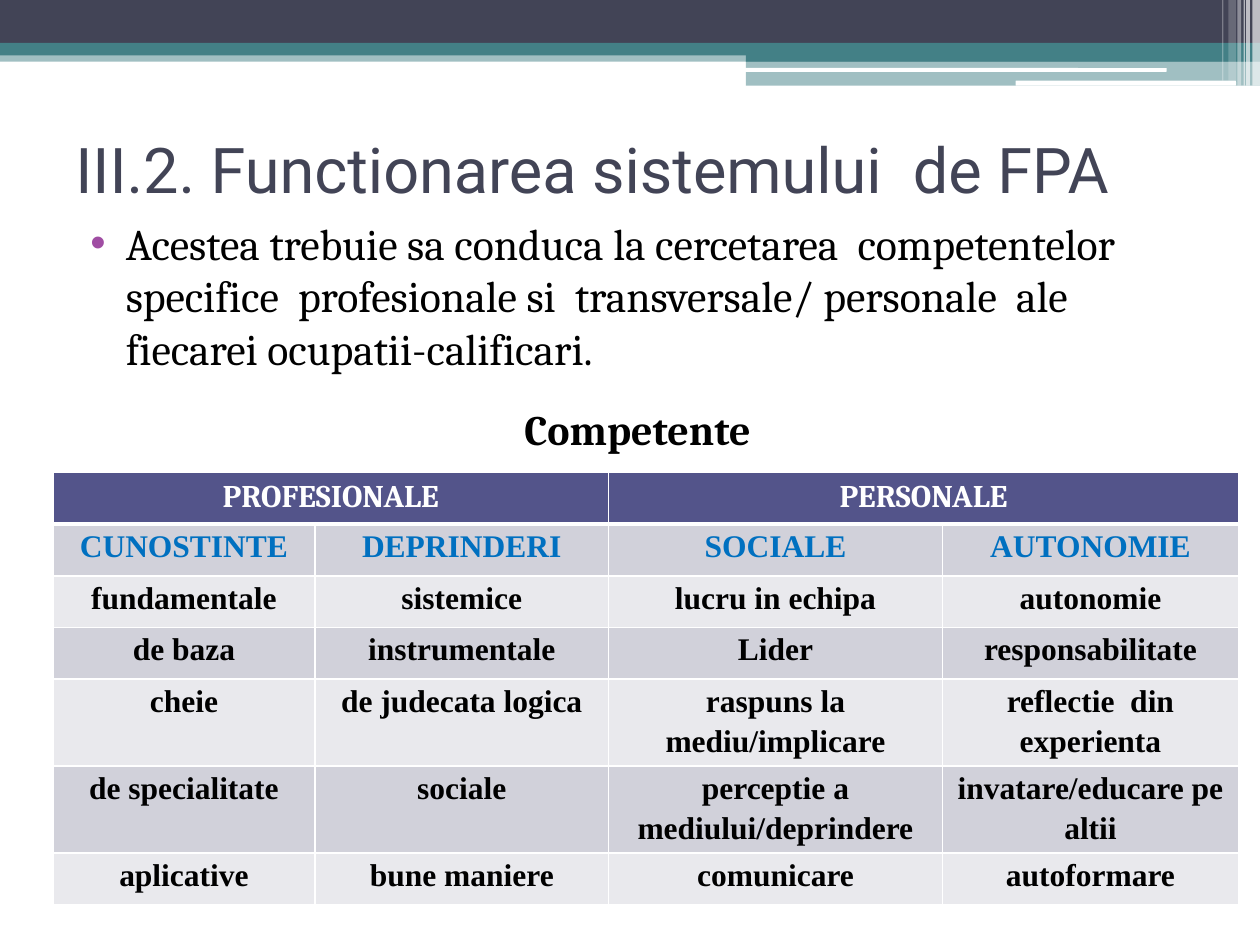
from pptx import Presentation
from pptx.dml.color import RGBColor
from pptx.enum.shapes import MSO_SHAPE as Shape
from pptx.enum.text import MSO_ANCHOR as Anchor, PP_ALIGN as Align
from pptx.oxml.ns import qn
from pptx.util import Inches, Pt
from lxml.etree import SubElement as Sub

WHITE = RGBColor(0xFF, 0xFF, 0xFF)
BLACK = RGBColor(0, 0, 0)
DARK = RGBColor(0x42, 0x44, 0x56)
TEAL = RGBColor(0x43, 0x80, 0x86)
PURPLE = RGBColor(0xA0, 0x4D, 0xA3)
INDIGO = RGBColor(0x53, 0x54, 0x8A)
BLUE = RGBColor(0x00, 0x70, 0xC0)
BANDS = RGBColor(0xD1, 0xD1, 0xDA), RGBColor(0xE9, 0xE9, 0xED)

TITLE = "III.2. Functionarea sistemului  de FPA"
POINT = ("Acestea trebuie sa conduca la cercetarea  competentelor specifice  "
         "profesionale si  transversale/ personale  ale  fiecarei "
         "ocupatii-calificari.")
CAPTION = "Competente"
GROUPS = ["PROFESIONALE", "PERSONALE"]
ROWS = [
    ["CUNOSTINTE", "DEPRINDERI", "SOCIALE", "AUTONOMIE"],
    ["fundamentale", "sistemice", "lucru in echipa", "autonomie"],
    ["de baza", "instrumentale", "Lider", "responsabilitate"],
    ["cheie", "de judecata logica", "raspuns la mediu/implicare",
     "reflectie  din experienta"],
    ["de specialitate", "sociale", "perceptie a mediului/deprindere",
     "invatare/educare pe altii"],
    ["aplicative", "bune maniere", "comunicare", "autoformare"],
]
COLS = [2.08, 2.33, 2.65, 2.35]
ROW = 0.41

# left, top, width, height, colour, opacity in percent
BARS = [
    (0, 0.4, 10, 0.09, TEAL, 50),
    (0, 0, 10, 0.34, DARK, 100),
    (0, 0.34, 10, 0.1, TEAL, 100),
    (5.92, 0.39, 4.08, 0.1, TEAL, 100),
    (5.92, 0.48, 4.08, 0.2, TEAL, 50),
]
PILLS = [(5.91, 0.54, 3.35, 0.03), (8.06, 0.64, 1.75, 0.04)]
# left, width, height, opacity in percent
STRIPES = [
    (9.94, 0.06, 0.68, 65), (9.89, 0.03, 0.68, 65), (9.87, 0.01, 0.68, 60),
    (9.82, 0.03, 0.68, 40), (9.75, 0.06, 0.64, 20), (9.7, 0.01, 0.64, 30),
]


def add_bar(slide, x, y, w, h, color, alpha=100, kind=Shape.RECTANGLE):
    bar = slide.shapes.add_shape(kind, *map(Inches, (x, y, w, h)))
    bar.shadow.inherit = False
    bar.line.fill.background()
    bar.fill.solid()
    bar.fill.fore_color.rgb = color
    if alpha < 100:
        tone = bar.fill._xPr.find(".//" + qn("a:srgbClr"))
        Sub(tone, qn("a:alpha"), val=str(alpha * 1000))


def add_box(slide, *place):
    frame = slide.shapes.add_textbox(*map(Inches, place)).text_frame
    frame.word_wrap = True
    return frame


def add_run(para, text, size, face, color, bold=False):
    run = para.add_run()
    run.text = text
    font = run.font
    font.size, font.name, font.bold = Pt(size), face, bold
    font.color.rgb = color


def indent(para):
    props = para._p.get_or_add_pPr()
    props.set("marL", str(Inches(0.4)))
    props.set("indent", str(Inches(-0.28)))
    return props


def edge(cell, **widths):
    """Draw white borders; keys are the sides L, R, T and B, in points."""
    props = cell._tc.get_or_add_tcPr()
    for side, width in widths.items():
        line = Sub(props, qn("a:ln" + side), w=str(Pt(width)))
        Sub(Sub(line, qn("a:solidFill")), qn("a:srgbClr"), val=str(WHITE))


def paint(cell, color):
    cell.fill.solid()
    cell.fill.fore_color.rgb = color


def add_grid(slide):
    count = len(ROWS) + 1
    grid = slide.shapes.add_table(
        count, len(COLS), Inches(0.42), Inches(3.75),
        Inches(sum(COLS)), Inches(ROW * count)).table
    for col, width in zip(grid.columns, COLS):
        col.width = Inches(width)
    for row in grid.rows:
        row.height = Inches(ROW)

    for c in range(len(COLS)):
        edge(grid.cell(0, c), L=1, R=1, T=1, B=3)
        paint(grid.cell(0, c), INDIGO)
    for i, text in enumerate(GROUPS):
        cell = grid.cell(0, 2 * i)
        cell.merge(grid.cell(0, 2 * i + 1))
        para = cell.text_frame.paragraphs[0]
        para.alignment = Align.CENTER
        add_run(para, text, 18, "Cambria", WHITE, True)

    for r, texts in enumerate(ROWS, 1):
        for c, text in enumerate(texts):
            cell = grid.cell(r, c)
            edge(cell, L=1, R=1, T=3 if r == 1 else 1, B=1)
            paint(cell, BANDS[(r - 1) % 2])
            cell.margin_left = cell.margin_right = Inches(0.07)
            cell.margin_top = cell.margin_bottom = 0
            para = cell.text_frame.paragraphs[0]
            para.alignment = Align.CENTER
            para.line_spacing = 1.15
            add_run(para, text, 18, "Times New Roman",
                    BLUE if r == 1 else BLACK, True)


def main():
    deck = Presentation()
    deck.slide_width, deck.slide_height = Inches(10), Inches(7.5)
    slide = deck.slides.add_slide(deck.slide_layouts[6])

    for bar in BARS:
        add_bar(slide, *bar)
    for pill in PILLS:
        add_bar(slide, *pill, WHITE, kind=Shape.ROUNDED_RECTANGLE)
    for x, w, h, alpha in STRIPES:
        add_bar(slide, x, 0, w, h, WHITE, alpha)

    head = add_box(slide, 0.5, 0.92, 9.25, 0.83)
    head.vertical_anchor = Anchor.MIDDLE
    add_run(head.paragraphs[0], TITLE, 36, "Roboto", DARK)

    body = add_box(slide, 0.5, 1.67, 9, 5.36)
    point = body.paragraphs[0]
    point.space_before = Pt(3)
    props = indent(point)
    Sub(Sub(props, qn("a:buClr")), qn("a:srgbClr"), val=str(PURPLE))
    Sub(props, qn("a:buFont"), typeface="Arial")
    Sub(props, qn("a:buChar"), char="•")
    add_run(point, POINT, 25, "Cambria", BLACK)

    label = body.add_paragraph()
    label.alignment = Align.CENTER
    label.space_before = Pt(17)
    indent(label)
    add_run(label, CAPTION, 24, "Cambria", BLACK, True)

    add_grid(slide)
    deck.save("out.pptx")


if __name__ == "__main__":
    main()
